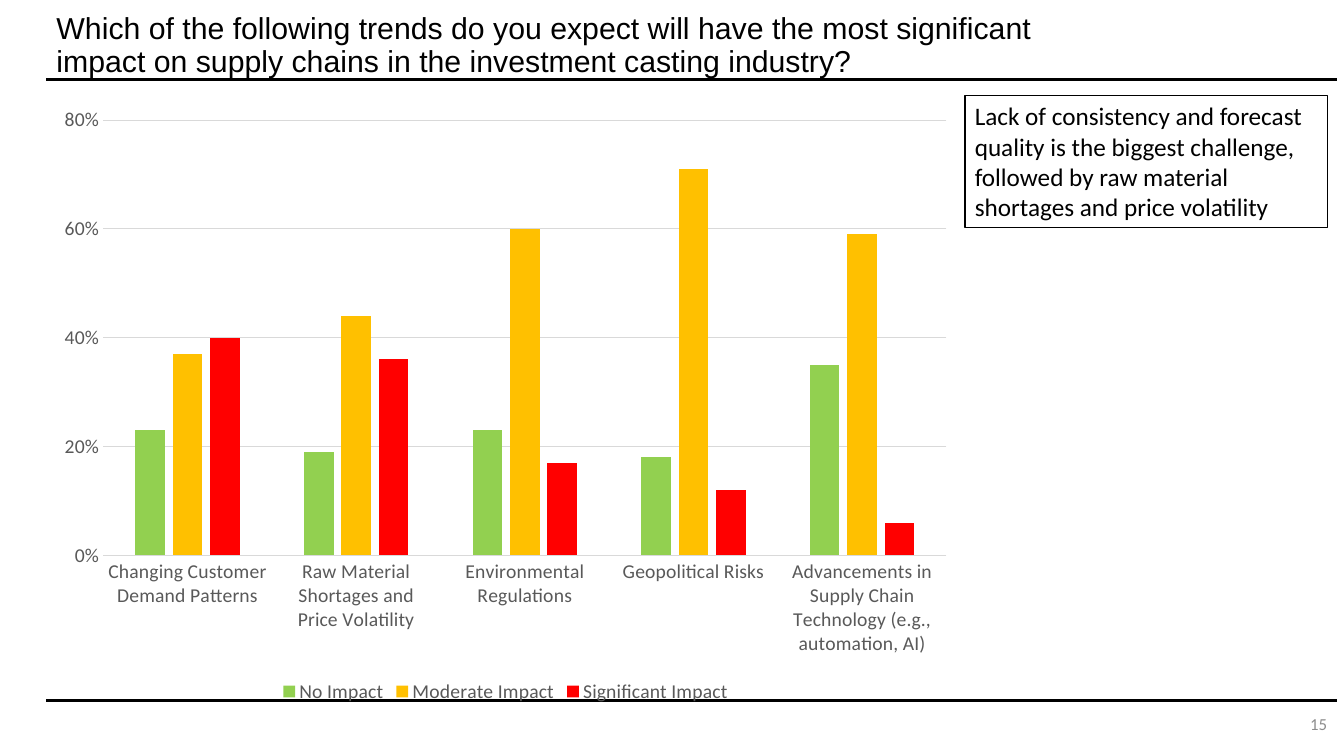
from lxml.etree import SubElement
from pptx import Presentation
from pptx.chart.data import CategoryChartData
from pptx.dml.color import RGBColor
from pptx.enum.chart import XL_CHART_TYPE, XL_LEGEND_POSITION, XL_TICK_MARK
from pptx.enum.shapes import MSO_CONNECTOR, MSO_SHAPE
from pptx.enum.text import MSO_ANCHOR, MSO_AUTO_SIZE, PP_ALIGN
from pptx.oxml.ns import qn
from pptx.util import Inches, Pt

THEME = {
    "ink": RGBColor.from_string("000000"),
    "paper": RGBColor.from_string("FFFFFF"),
    "label": RGBColor.from_string("595959"),
    "grid": RGBColor.from_string("D9D9D9"),
    "number": RGBColor.from_string("8C8C8C"),
    "series": ["92D050", "FFC000", "FF0000"],
    "heading_font": "Arial",
    "body_font": "Calibri",
    "title_size": Pt(21.6),
    "takeaway_size": Pt(18),
    "chart_size": Pt(14),
    "number_size": Pt(12),
}

# Page grid
LEFT, RIGHT = Inches(0.46), Inches(13.26)
TOP_RULE, BOTTOM_RULE = Inches(0.79), Inches(6.95)
BODY_TOP, SPLIT = Inches(0.95), Inches(9.57)


def style_font(font, size, color, name=THEME["body_font"]):
    for attribute, value in {"size": size, "name": name, "bold": False}.items():
        setattr(font, attribute, value)
    font.color.rgb = color


def fill_text(frame, text, size, color, name=THEME["body_font"], **paragraph_format):
    frame.word_wrap = True
    frame.text = text
    paragraph = frame.paragraphs[0]
    for attribute, value in paragraph_format.items():
        setattr(paragraph, attribute, value)
    style_font(paragraph.runs[0].font, size, color, name)


presentation = Presentation()
presentation.slide_width, presentation.slide_height = Inches(13.33), Inches(7.5)
slide = presentation.slides.add_slide(presentation.slide_layouts[5])

# Rules above and below the body
for rule_y in (TOP_RULE, BOTTOM_RULE):
    rule = slide.shapes.add_connector(MSO_CONNECTOR.STRAIGHT, LEFT, rule_y, RIGHT, rule_y)
    rule.line.color.rgb = THEME["ink"]
    rule.line.width = Pt(0)
    SubElement(rule._element.spPr, qn("a:effectLst"))

# Question
question = slide.shapes.title
question_place = {"left": LEFT, "top": Inches(0.19), "width": Inches(10.03), "height": Inches(0.54)}
for attribute, value in question_place.items():
    setattr(question, attribute, value)
question.text_frame.auto_size = MSO_AUTO_SIZE.NONE
question.text_frame.vertical_anchor = MSO_ANCHOR.MIDDLE
fill_text(
    question.text_frame,
    "Which of the following trends do you expect will have the most significant "
    "impact on supply chains in the investment casting industry?",
    THEME["title_size"], THEME["ink"], THEME["heading_font"],
    alignment=PP_ALIGN.LEFT, line_spacing=0.9,
)

# Slide number
page_number = slide.shapes.add_textbox(Inches(9.42), Inches(7.02), Inches(3.84), Inches(0.33))
page_number.text_frame.vertical_anchor = MSO_ANCHOR.MIDDLE
fill_text(page_number.text_frame, "15", THEME["number_size"], THEME["number"],
          alignment=PP_ALIGN.RIGHT)

# Survey answers by trend
answers = CategoryChartData(number_format="0%")
answers.categories = [
    "Changing Customer Demand Patterns",
    "Raw Material Shortages and Price Volatility",
    "Environmental Regulations",
    "Geopolitical Risks",
    "Advancements in Supply Chain Technology (e.g., automation, AI)",
]
answers.add_series("No Impact", [0.23, 0.19, 0.23, 0.18, 0.35])
answers.add_series("Moderate Impact", [0.37, 0.44, 0.60, 0.71, 0.59])
answers.add_series("Significant Impact", [0.40, 0.36, 0.17, 0.12, 0.06])
impact_chart = slide.shapes.add_chart(
    XL_CHART_TYPE.COLUMN_CLUSTERED, LEFT, BODY_TOP, SPLIT - LEFT, Inches(6.07), answers
).chart
style_font(impact_chart.font, THEME["chart_size"], THEME["ink"])
impact_chart.has_title = False

# Columns
columns = impact_chart.plots[0]
for attribute, value in {"gap_width": 219, "overlap": -27, "vary_by_categories": False}.items():
    setattr(columns, attribute, value)
for impact, color in zip(columns.series, THEME["series"]):
    impact.format.fill.solid()
    impact.format.fill.fore_color.rgb = RGBColor.from_string(color)

# Axes and gridlines
trend_axis, share_axis = impact_chart.category_axis, impact_chart.value_axis
for axis in (trend_axis, share_axis):
    axis.major_tick_mark = axis.minor_tick_mark = XL_TICK_MARK.NONE
    style_font(axis.tick_labels.font, THEME["chart_size"], THEME["label"])
for attribute, value in {"minimum_scale": 0, "maximum_scale": 0.8, "major_unit": 0.2}.items():
    setattr(share_axis, attribute, value)
share_axis.tick_labels.number_format = "0%"
share_axis.tick_labels.number_format_is_linked = False
share_axis.format.line.fill.background()
for line in (trend_axis.format.line, share_axis.major_gridlines.format.line):
    line.color.rgb = THEME["grid"]
    line.width = Pt(0.75)

# Legend
impact_chart.has_legend = True
impact_chart.legend.position = XL_LEGEND_POSITION.BOTTOM
impact_chart.legend.include_in_layout = False
style_font(impact_chart.legend.font, THEME["chart_size"], THEME["label"])

# Takeaway
takeaway = slide.shapes.add_shape(MSO_SHAPE.RECTANGLE, SPLIT, BODY_TOP, Inches(3.6), Inches(1.31))
takeaway.shadow.inherit = False
takeaway.fill.solid()
takeaway.fill.fore_color.rgb = THEME["paper"]
takeaway.line.color.rgb = THEME["ink"]
takeaway.line.width = Pt(1)
takeaway.text_frame.auto_size = MSO_AUTO_SIZE.SHAPE_TO_FIT_TEXT
takeaway.text_frame.vertical_anchor = MSO_ANCHOR.TOP
fill_text(
    takeaway.text_frame,
    "Lack of consistency and forecast quality is the biggest challenge, "
    "followed by raw material shortages and price volatility",
    THEME["takeaway_size"], THEME["ink"], alignment=PP_ALIGN.LEFT,
)

presentation.save("out.pptx")
